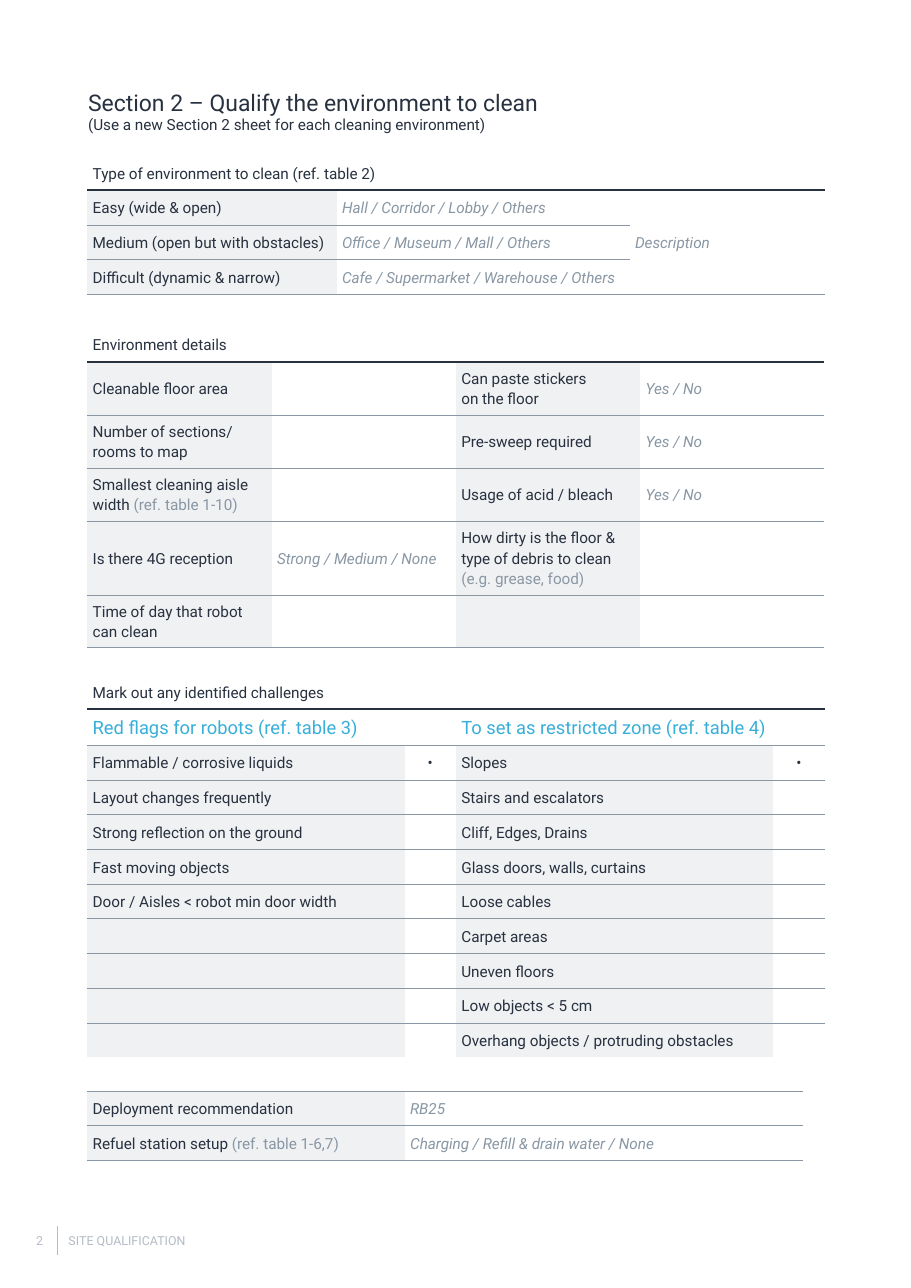
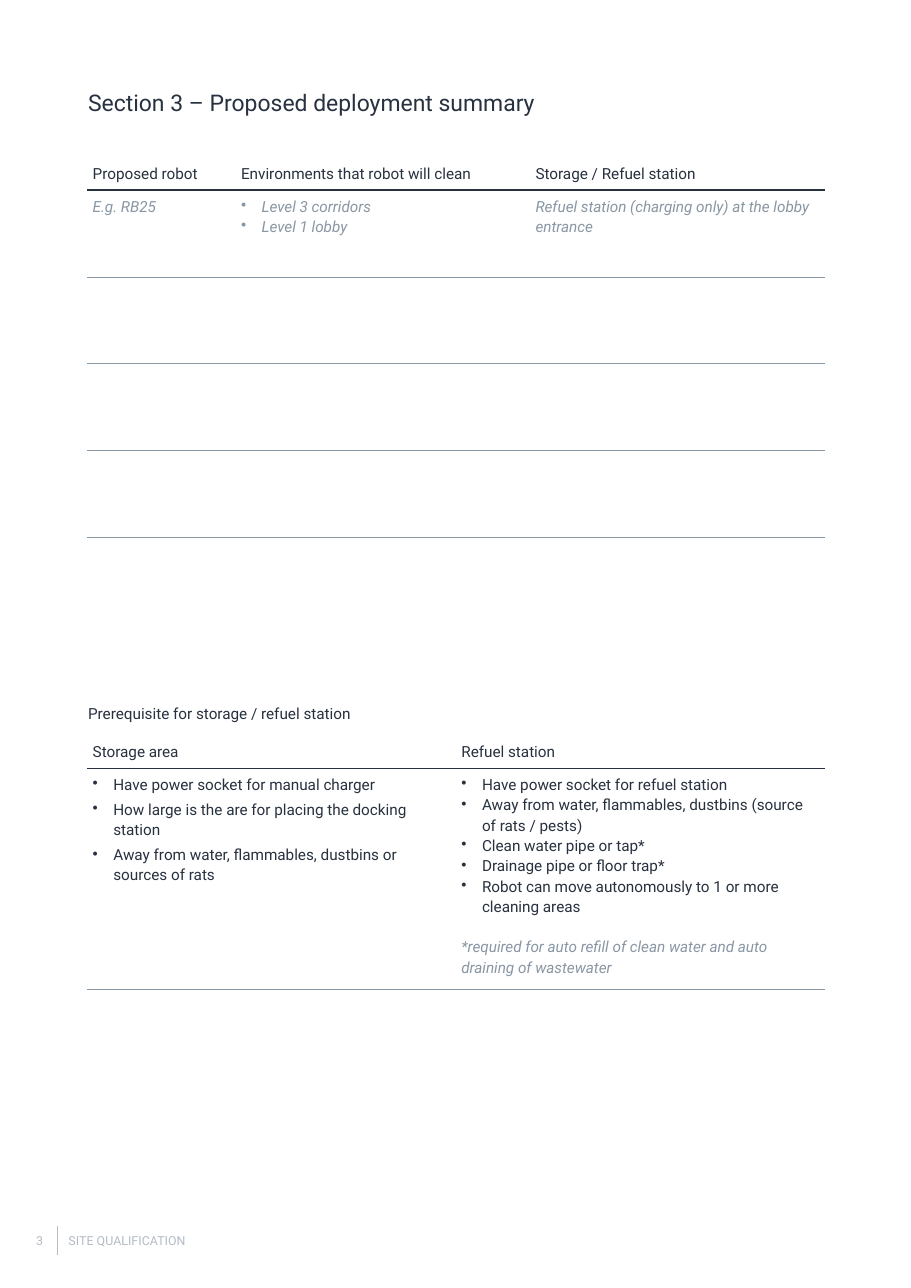
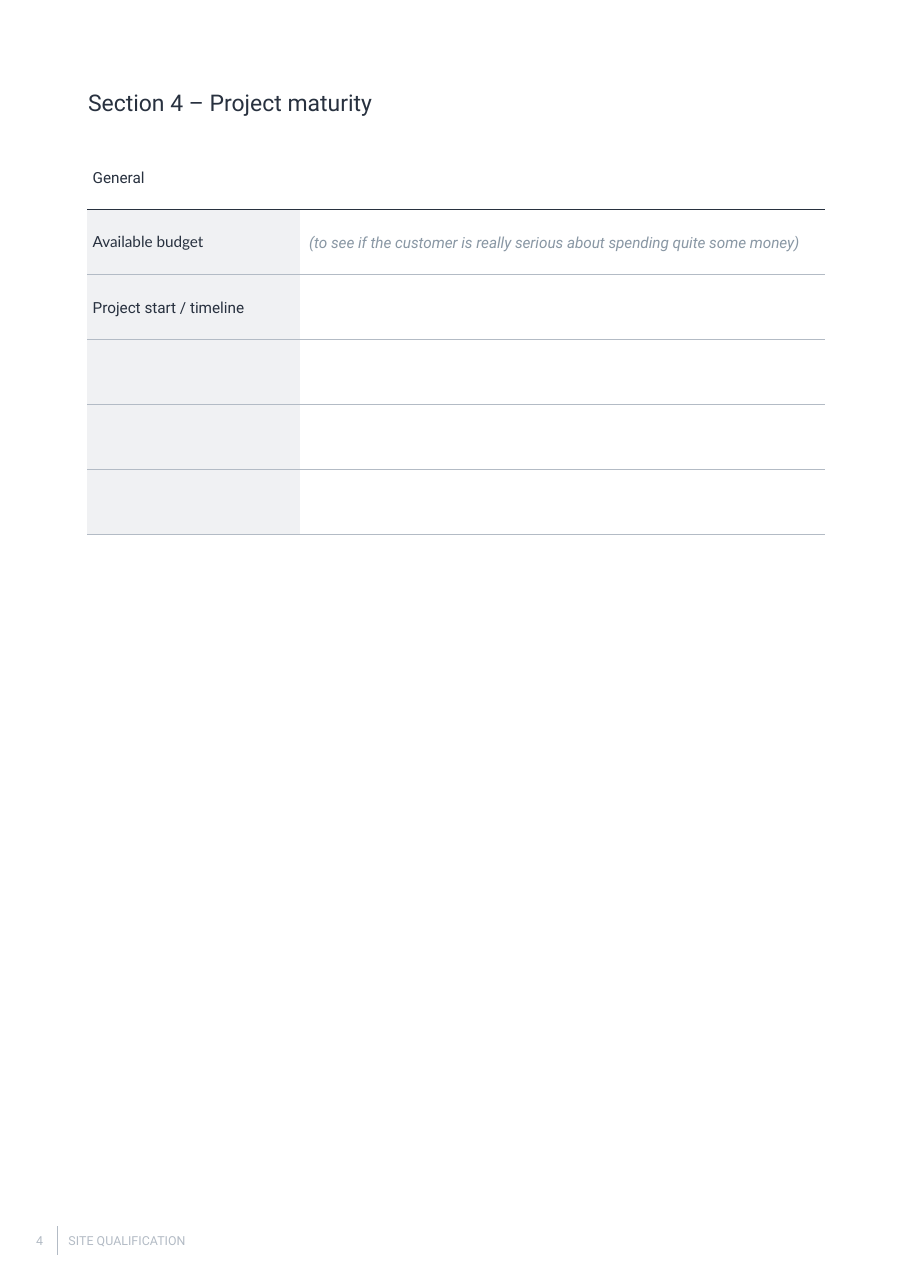
from dataclasses import dataclass

from lxml.etree import SubElement
from pptx import Presentation
from pptx.dml.color import RGBColor
from pptx.enum.shapes import MSO_CONNECTOR
from pptx.enum.text import MSO_ANCHOR, PP_ALIGN
from pptx.oxml.ns import qn
from pptx.util import Pt

INK = "28313F"
MUTED = "8997A4"
PALE = "B3BBC5"
CYAN = "38AFD9"
LABEL_FILL = "F0F1F3"

LEFT = 57
TABLE_WIDTH = 482
HALF = TABLE_WIDTH / 2
ROW = 22.68
TWO_LINES = 34.6
THREE_LINES = 48.3
DEPLOYMENT_ROW = 56.7
MATURITY_ROW = 42.5
CELL_MARGIN = 3.6
BULLET_INDENT = 13.5


@dataclass(frozen=True)
class Text:
    text: str
    note: str = ""
    color: str = INK
    size: float = 10
    font: str = "Roboto"
    italic: bool = False
    bullet: bool = False
    centered: bool = False
    indent: float = 0
    space_before: float = 0
    line_spacing: float = 1.14


Cell = str | Text | tuple[Text, ...] | None


@dataclass(frozen=True)
class Grid:
    top: float
    columns: tuple[float, ...]
    heights: tuple[float, ...]
    rows: tuple[tuple[Cell, ...], ...]
    merges: tuple[tuple[int, int, int, int], ...] = ()
    label_columns: tuple[int, ...] = ()
    first_label_row: int = 1
    top_anchored_from: int = 99
    header: bool = True
    bottom_line: bool = True
    rule_color: str = MUTED


@dataclass(frozen=True)
class Page:
    number: int
    title: str
    grids: tuple[Grid, ...]
    subtitle: str = ""


def hint(text: str, **options) -> Text:
    return Text(text, color=MUTED, italic=True, **options)


def bullets(*lines: str, **options) -> tuple[Text, ...]:
    return tuple(Text(line, bullet=True, **options) for line in lines)


def paint(color_format, color: str) -> None:
    color_format.rgb = RGBColor.from_string(color)


def write_paragraph(paragraph, text: Text) -> None:
    paragraph.line_spacing = text.line_spacing
    if text.space_before:
        paragraph.space_before = Pt(text.space_before)
    if text.centered:
        paragraph.alignment = PP_ALIGN.CENTER
    properties = paragraph._p.get_or_add_pPr()
    if text.bullet:
        properties.set("marL", str(Pt(BULLET_INDENT)))
        properties.set("indent", str(-Pt(BULLET_INDENT)))
        SubElement(properties, qn("a:buChar")).set("char", "•")
    elif text.indent:
        properties.set("marL", str(Pt(text.indent)))
    font = paragraph.font
    font.size = Pt(text.size)
    font.name = text.font
    font.italic = text.italic
    paint(font.color, text.color)
    for index, line in enumerate(text.text.split("\n")):
        if index:
            paragraph.add_line_break()
        paragraph.add_run().text = line
    if text.note:
        run = paragraph.add_run()
        run.text = text.note
        paint(run.font.color, MUTED)


def write_frame(frame, texts: tuple[Text, ...]) -> None:
    for index, text in enumerate(texts):
        paragraph = frame.add_paragraph() if index else frame.paragraphs[0]
        write_paragraph(paragraph, text)


def add_text(slide, left: float, top: float, width: float, height: float,
             texts: tuple[Text, ...], anchor=MSO_ANCHOR.TOP) -> None:
    box = slide.shapes.add_textbox(Pt(left), Pt(top), Pt(width), Pt(height))
    frame = box.text_frame
    frame.word_wrap = True
    frame.vertical_anchor = anchor
    frame.margin_left = frame.margin_right = 0
    frame.margin_top = frame.margin_bottom = 0
    write_frame(frame, texts)


def set_border(cell, side: str, line: tuple[str, float] | None) -> None:
    border = SubElement(cell._tc.get_or_add_tcPr(), qn(f"a:ln{side}"))
    if line is None:
        border.set("w", "0")
        SubElement(border, qn("a:noFill"))
        return
    color, width = line
    border.set("w", str(Pt(width)))
    fill = SubElement(border, qn("a:solidFill"))
    SubElement(fill, qn("a:srgbClr")).set("val", color)


def line_below(grid: Grid, row: int, column: int) -> tuple[str, float] | None:
    rule = (grid.rule_color, 0.25)
    if row < 0:
        return None if grid.header else rule
    if any(first <= row < last and left <= column <= right
           for first, left, last, right in grid.merges):
        return None
    if row == len(grid.heights) - 1 and not grid.bottom_line:
        return None
    return (INK, 1) if row == 0 and grid.header else rule


def fill_cell(cell, grid: Grid, row: int, column: int, content: Cell) -> None:
    cell.margin_left = cell.margin_right = Pt(CELL_MARGIN)
    cell.margin_top = cell.margin_bottom = Pt(CELL_MARGIN)
    top_anchored = row >= grid.top_anchored_from
    cell.vertical_anchor = MSO_ANCHOR.TOP if top_anchored else MSO_ANCHOR.MIDDLE
    last_row = row + cell.span_height - 1
    set_border(cell, "L", None)
    set_border(cell, "R", None)
    set_border(cell, "T", line_below(grid, row - 1, column))
    set_border(cell, "B", line_below(grid, last_row, column))
    if column in grid.label_columns and row >= grid.first_label_row:
        cell.fill.solid()
        paint(cell.fill.fore_color, LABEL_FILL)
    else:
        cell.fill.background()
    if content is None:
        paragraph = cell.text_frame.paragraphs[0]
        paragraph._p.get_or_add_endParaRPr().set("sz", "1000")
        return
    if isinstance(content, str):
        content = Text(content)
    write_frame(cell.text_frame, (content,) if isinstance(content, Text) else content)


def add_grid(slide, grid: Grid) -> None:
    frame = slide.shapes.add_table(
        len(grid.heights), len(grid.columns), Pt(LEFT), Pt(grid.top),
        Pt(sum(grid.columns)), Pt(sum(grid.heights)))
    table = frame.table
    table.first_row = table.horz_banding = False
    for column, width in zip(table.columns, grid.columns):
        column.width = Pt(width)
    for row, height in zip(table.rows, grid.heights):
        row.height = Pt(height)
    for first, left, last, right in grid.merges:
        table.cell(first, left).merge(table.cell(last, right))
    for row in range(len(grid.heights)):
        contents = grid.rows[row] if row < len(grid.rows) else ()
        for column in range(len(grid.columns)):
            content = contents[column] if column < len(contents) else None
            fill_cell(table.cell(row, column), grid, row, column, content)


def add_footer(slide, number: int) -> None:
    divider = slide.shapes.add_connector(
        MSO_CONNECTOR.STRAIGHT, Pt(37.5), Pt(801.5), Pt(37.5), Pt(820))
    paint(divider.line.color, PALE)
    divider.line.width = Pt(0.25)
    SubElement(divider._element.spPr, qn("a:effectLst"))
    for left, width, label in ((23.6, 13, str(number)), (44.8, 102, "SITE QUALIFICATION")):
        text = Text(label, color=PALE, size=8.1, line_spacing=1)
        add_text(slide, left, 805.7, width, 10, (text,), MSO_ANCHOR.MIDDLE)


def add_page(presentation, page: Page):
    slide = presentation.slides.add_slide(presentation.slide_layouts[6])
    add_footer(slide, page.number)
    heading = (Text(page.title, size=15, line_spacing=1),)
    if page.subtitle:
        heading += (Text(page.subtitle, line_spacing=1),)
    add_text(slide, LEFT + 0.6, 57.6, 330, 37, heading)
    for grid in page.grids:
        add_grid(slide, grid)
    return slide


ENVIRONMENT_TYPE = Grid(
    top=101.5, columns=(163, 191.5, 127.5), heights=(ROW,) * 4,
    merges=((0, 0, 0, 2), (1, 2, 3, 2)), label_columns=(0,),
    rows=(
        ("Type of environment to clean (ref. table 2)",),
        ("Easy (wide & open)", hint("Hall / Corridor / Lobby / Others"), hint("Description")),
        ("Medium (open but with obstacles)", hint("Office / Museum / Mall / Others")),
        ("Difficult (dynamic & narrow)", hint("Cafe / Supermarket / Warehouse / Others")),
    ))

YES_NO = hint("Yes / No")

ENVIRONMENT_DETAILS = Grid(
    top=213.8, columns=(TABLE_WIDTH / 4,) * 4,
    heights=(ROW, TWO_LINES, TWO_LINES, TWO_LINES, THREE_LINES, TWO_LINES),
    merges=((0, 0, 0, 1),), label_columns=(0, 2),
    rows=(
        ("Environment details",),
        ("Cleanable floor area", None, "Can paste stickers\non the floor", YES_NO),
        ("Number of sections/\nrooms to map", None, "Pre-sweep required", YES_NO),
        (Text("Smallest cleaning aisle width ", "(ref. table 1-10)"), None,
         "Usage of acid / bleach", YES_NO),
        ("Is there 4G reception", hint("Strong / Medium / None"),
         Text("How dirty is the floor & type of debris to clean ", "(e.g. grease, food)")),
        ("Time of day that robot can clean",),
    ))

MARK = Text("•", centered=True)

CHALLENGES = Grid(
    top=440.6, columns=(207.5, 33.5) * 2, heights=(ROW, 23.5) + (ROW,) * 9,
    merges=((0, 0, 0, 1), (1, 0, 1, 1), (1, 2, 1, 3)),
    label_columns=(0, 2), first_label_row=2, bottom_line=False,
    rows=(
        ("Mark out any identified challenges",),
        (Text("Red flags for robots (ref. table 3)", color=CYAN, size=12), None,
         Text("To set as restricted zone (ref. table 4)", color=CYAN, size=12)),
        ("Flammable / corrosive liquids", MARK, "Slopes", MARK),
        ("Layout changes frequently", None, "Stairs and escalators"),
        ("Strong reflection on the ground", None, "Cliff, Edges, Drains"),
        ("Fast moving objects", None, "Glass doors, walls, curtains"),
        ("Door / Aisles < robot min door width", None, "Loose cables"),
        (None, None, "Carpet areas"),
        (None, None, "Uneven floors"),
        (None, None, "Low objects < 5 cm"),
        (None, None, "Overhang objects / protruding obstacles"),
    ))

RECOMMENDATION = Grid(
    top=712.8, columns=(207.5, 260.5), heights=(ROW,) * 2,
    label_columns=(0,), first_label_row=0, header=False,
    rows=(
        ("Deployment recommendation", hint("RB25")),
        (Text("Refuel station setup ", "(ref. table 1-6,7)"),
         hint("Charging / Refill & drain water / None")),
    ))

DEPLOYMENT = Grid(
    top=101.5, columns=(97, 192.5, 192.5), heights=(ROW,) + (DEPLOYMENT_ROW,) * 5,
    top_anchored_from=1, bottom_line=False,
    rows=(
        ("Proposed robot", "Environments that robot will clean", "Storage / Refuel station"),
        (hint("E.g. RB25"),
         bullets("Level 3 corridors", "Level 1 lobby", color=MUTED, italic=True),
         hint("Refuel station (charging only) at the lobby entrance")),
    ))

STORAGE_FIRST, *STORAGE_REST = (
    "Have power socket for manual charger",
    "How large is the are for placing the docking station",
    "Away from water, flammables, dustbins or sources of rats",
)

PREREQUISITES = Grid(
    top=479.5, columns=(HALF, HALF), heights=(ROW, 144.4), top_anchored_from=1,
    rows=(
        ("Storage area", "Refuel station"),
        (bullets(STORAGE_FIRST) + bullets(*STORAGE_REST, space_before=3),
         bullets("Have power socket for refuel station",
                 "Away from water, flammables, dustbins (source of rats / pests)",
                 "Clean water pipe or tap*",
                 "Drainage pipe or floor trap*",
                 "Robot can move autonomously to 1 or more cleaning areas")
         + (hint("*required for auto refill of clean water and auto draining of wastewater",
                 space_before=13.2),)),
    ))

MATURITY = Grid(
    top=94.3, columns=(139, 343), heights=(MATURITY_ROW,) * 6,
    merges=((0, 0, 0, 1),), label_columns=(0,), rule_color=PALE,
    rows=(
        ("General",),
        (Text("Available budget", font="Lato", line_spacing=1),
         hint("(to see if the customer is really serious about spending quite some money)",
              indent=2.5)),
        ("Project start / timeline",),
    ))


def main() -> None:
    presentation = Presentation()
    presentation.slide_width = Pt(595.44)
    presentation.slide_height = Pt(841.68)
    add_page(presentation, Page(
        2, "Section 2 – Qualify the environment to clean",
        (ENVIRONMENT_TYPE, ENVIRONMENT_DETAILS, CHALLENGES, RECOMMENDATION),
        "(Use a new Section 2 sheet for each cleaning environment)"))
    summary = add_page(presentation, Page(
        3, "Section 3 – Proposed deployment summary", (DEPLOYMENT, PREREQUISITES)))
    add_text(summary, LEFT + 0.6, 460, 298, 19,
             (Text("Prerequisite for storage / refuel station", line_spacing=1),))
    add_page(presentation, Page(4, "Section 4 – Project maturity", (MATURITY,)))
    presentation.save("out.pptx")


if __name__ == "__main__":
    main()
